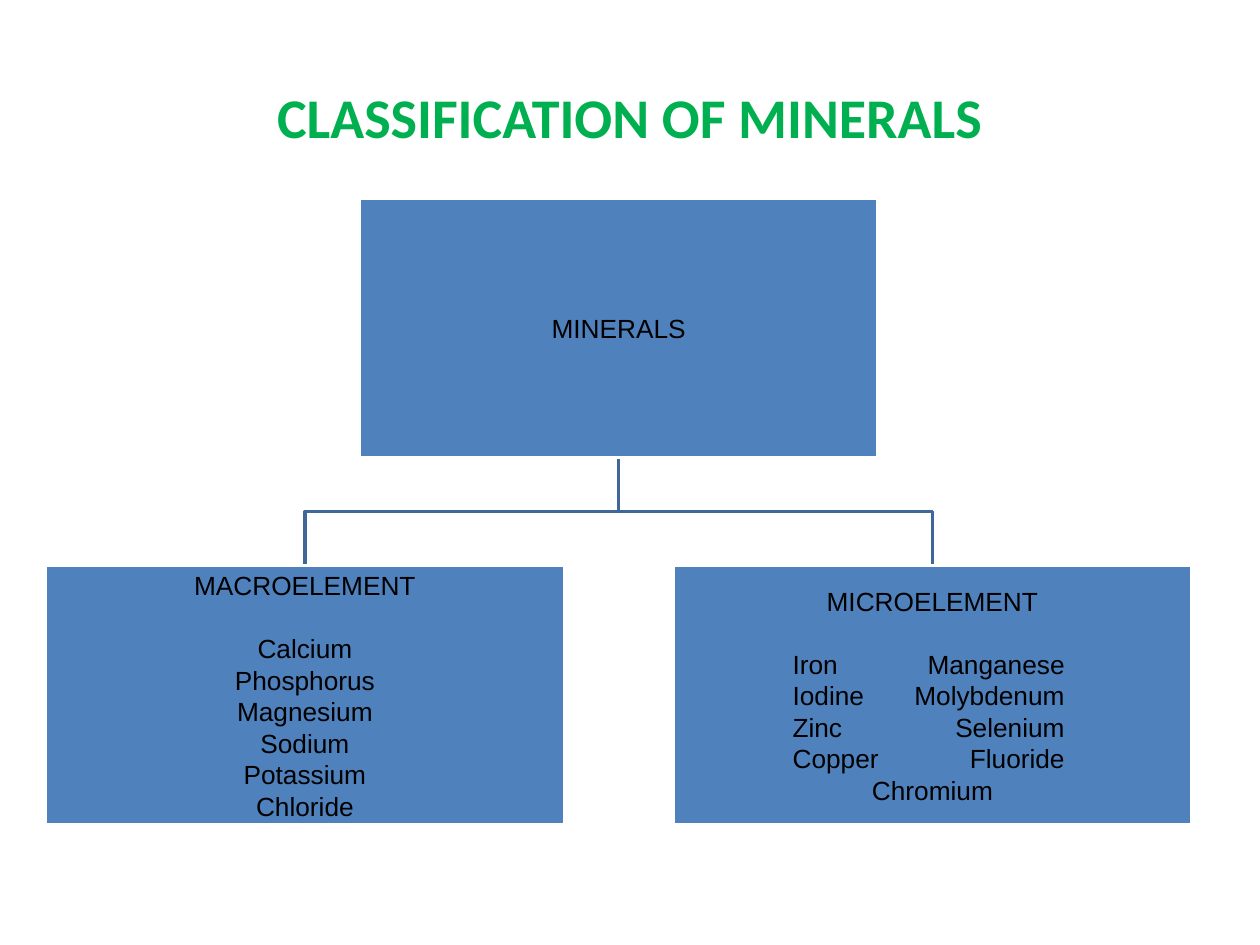
from lxml.etree import SubElement
from pptx import Presentation
from pptx.dml.color import RGBColor
from pptx.enum.shapes import MSO_SHAPE as Shape
from pptx.enum.text import MSO_ANCHOR as Anchor, PP_ALIGN as Align
from pptx.oxml.ns import qn
from pptx.util import Inches, Pt

GREEN = RGBColor(0x00, 0xB0, 0x50)
BLUE = RGBColor(0x4F, 0x81, 0xBD)
DARK_BLUE = RGBColor(0x3F, 0x67, 0x97)
WHITE = RGBColor(0xFF, 0xFF, 0xFF)
BLACK = RGBColor(0x00, 0x00, 0x00)

BOX_WIDTH, BOX_HEIGHT = 4.12, 2.06
COLUMN_STEP, ROW_STEP = 2.49, 2.92
GRID_LEFT, GRID_TOP = 0.36, 1.57
PAIR_INSET, PAIR_TAB = 0.95, 2.16

TITLE_FONT = {"name": "Calibri", "size": Pt(32), "bold": True}
BOX_FONT = {"name": "Arial", "size": Pt(15)}
LINE_FORMAT = {"alignment": Align.CENTER, "line_spacing": Pt(18)}
HEADING_FORMAT = LINE_FORMAT | {"space_after": Pt(18)}
PAIR_FORMAT = LINE_FORMAT | {"alignment": Align.LEFT}

MACROELEMENTS = ["Calcium", "Phosphorus", "Magnesium", "Sodium", "Potassium", "Chloride"]
MICROELEMENTS = ["Iron\tManganese", "Iodine\tMolybdenum", "Zinc\tSelenium",
                 "Copper\tFluoride", "Chromium"]


def apply(target, values):
    for name, value in values.items():
        setattr(target, name, value)


def write(paragraph, text, paragraph_format, font_format, color):
    apply(paragraph, paragraph_format)
    run = paragraph.add_run()
    run.text = text
    apply(run.font, font_format)
    run.font.color.rgb = color


def add_right_tab(paragraph, position):
    tabs = SubElement(paragraph._p.get_or_add_pPr(), qn("a:tabLst"))
    SubElement(tabs, qn("a:tab"), pos=str(Inches(position)), algn="r")


def add_title(slide, text):
    frame = slide.shapes.add_textbox(Inches(0.5), Inches(0.3), Inches(9), Inches(1.25)).text_frame
    apply(frame, {"word_wrap": True, "vertical_anchor": Anchor.MIDDLE})
    write(frame.paragraphs[0], text, {"alignment": Align.CENTER}, TITLE_FONT, GREEN)


def box_corner(column, row):
    return GRID_LEFT + column * COLUMN_STEP, GRID_TOP + row * ROW_STEP


def add_branch(slide, parent, child):
    """Join the foot of the parent box to the head of the child box."""
    parent_left, parent_top = box_corner(*parent)
    child_left, end = box_corner(*child)
    start = parent_top + BOX_HEIGHT
    middle = (start + end) / 2
    x_from, x_to = parent_left + BOX_WIDTH / 2, child_left + BOX_WIDTH / 2
    builder = slide.shapes.build_freeform(Inches(x_from), Inches(start))
    corners = [(x_from, middle), (x_to, middle), (x_to, end)]
    builder.add_line_segments([(Inches(x), Inches(y)) for x, y in corners], close=False)
    branch = builder.convert_to_shape()
    branch.shadow.inherit = False
    branch.fill.background()
    branch.line.color.rgb = DARK_BLUE
    branch.line.width = Pt(2)


def add_box(slide, cell, heading, elements=()):
    """Draw a box; elements split by a tab are set in two columns."""
    left, top = box_corner(*cell)
    box = slide.shapes.add_shape(Shape.RECTANGLE, Inches(left), Inches(top),
                                 Inches(BOX_WIDTH), Inches(BOX_HEIGHT))
    box.shadow.inherit = False
    box.fill.solid()
    box.fill.fore_color.rgb = BLUE
    box.line.color.rgb = WHITE
    box.line.width = Pt(2)
    frame = box.text_frame
    side = Inches(PAIR_INSET if any("\t" in text for text in elements) else 0.01)
    apply(frame, {"word_wrap": True, "vertical_anchor": Anchor.MIDDLE,
                  "margin_left": side, "margin_right": side,
                  "margin_top": Inches(0.01), "margin_bottom": Inches(0.01)})
    heading_format = HEADING_FORMAT if elements else LINE_FORMAT
    write(frame.paragraphs[0], heading, heading_format, BOX_FONT, BLACK)
    for text in elements:
        paragraph = frame.add_paragraph()
        paired = "\t" in text
        write(paragraph, text, PAIR_FORMAT if paired else LINE_FORMAT, BOX_FONT, BLACK)
        if paired:
            add_right_tab(paragraph, PAIR_TAB)


def main():
    presentation = Presentation()
    presentation.slide_width, presentation.slide_height = Inches(10), Inches(7.5)
    slide = presentation.slides.add_slide(presentation.slide_layouts[6])
    root, macro, micro = (1, 0), (0, 1), (2, 1)
    add_title(slide, "CLASSIFICATION OF MINERALS")
    for child in (micro, macro):
        add_branch(slide, root, child)
    add_box(slide, root, "MINERALS")
    add_box(slide, macro, "MACROELEMENT", MACROELEMENTS)
    add_box(slide, micro, "MICROELEMENT", MICROELEMENTS)
    presentation.save("out.pptx")


if __name__ == "__main__":
    main()
